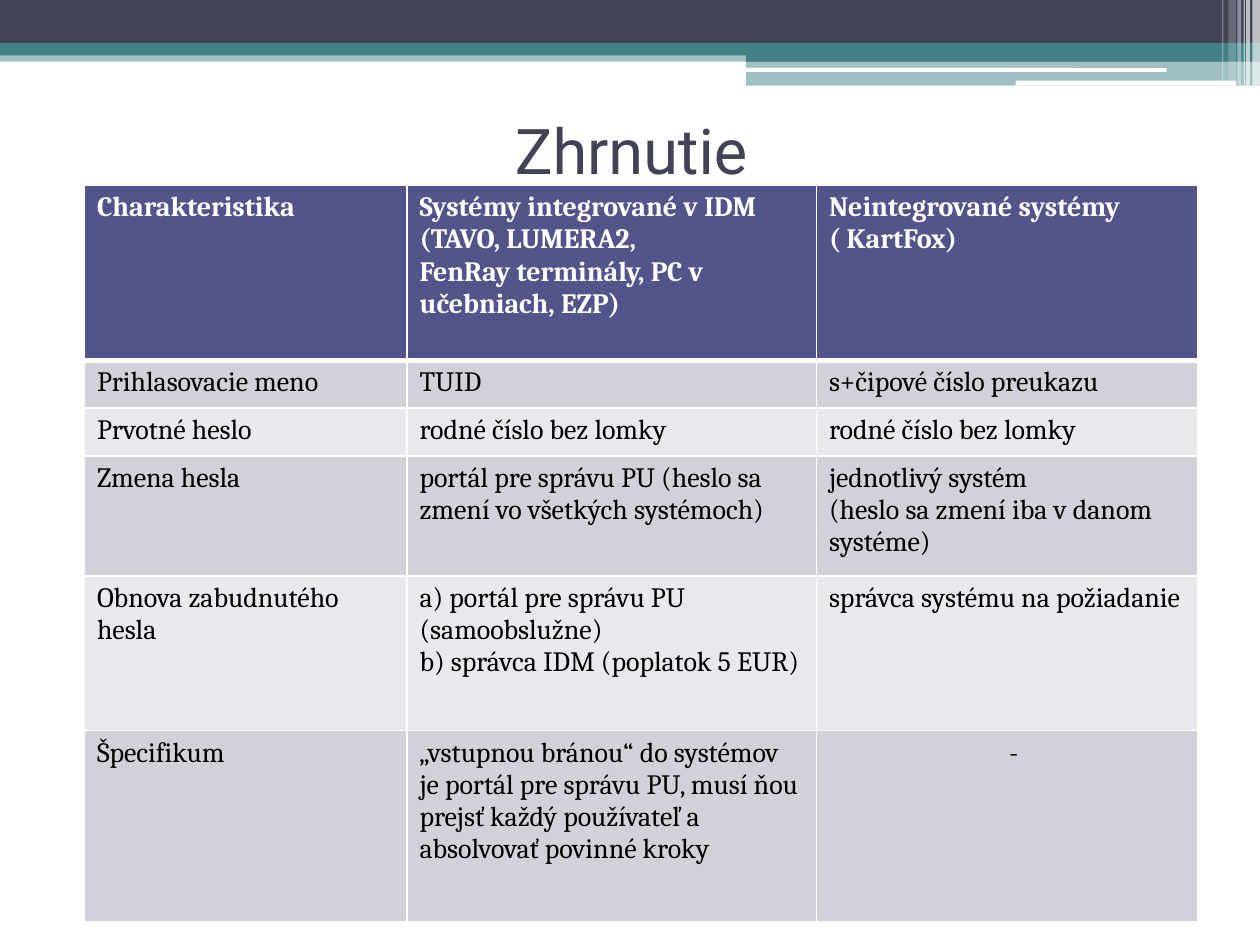
"""Build the summary slide comparing integrated and separate systems."""
import pptx
import pptx.util
import pptx.dml.color
import pptx.enum.shapes
import pptx.enum.text
import pptx.oxml
import pptx.oxml.ns
import lxml.etree

Inches = pptx.util.Inches
Pt = pptx.util.Pt
RGBColor = pptx.dml.color.RGBColor
MSO_SHAPE = pptx.enum.shapes.MSO_SHAPE
PP_ALIGN = pptx.enum.text.PP_ALIGN
MSO_ANCHOR = pptx.enum.text.MSO_ANCHOR

WHITE = RGBColor(0xFF, 0xFF, 0xFF)
BLACK = RGBColor(0x00, 0x00, 0x00)
TEAL = RGBColor(0x43, 0x80, 0x86)
SLATE = RGBColor(0x42, 0x44, 0x56)
HEADER_FILL = RGBColor(0x53, 0x54, 0x8A)
DARK_BAND = RGBColor(0xD1, 0xD1, 0xDA)
LIGHT_BAND = RGBColor(0xE9, 0xE9, 0xED)


def add_run(paragraph, text, font_name, size, color, bold=False):
    run = paragraph.add_run()
    run.text = text
    run.font.name = font_name
    run.font.size = Pt(size)
    run.font.color.rgb = color
    run.font.bold = bold


def add_border(cell, side, width):
    properties = cell._tc.get_or_add_tcPr()
    line = lxml.etree.SubElement(properties, pptx.oxml.ns.qn(f"a:ln{side}"), w=str(Pt(width)))
    fill = lxml.etree.SubElement(line, pptx.oxml.ns.qn("a:solidFill"))
    lxml.etree.SubElement(fill, pptx.oxml.ns.qn("a:srgbClr"), val=str(WHITE))


presentation = pptx.Presentation()
presentation.slide_width = Inches(10)
presentation.slide_height = Inches(7.5)
slide = presentation.slides.add_slide(presentation.slide_layouts[6])

BAR, ROUNDED = MSO_SHAPE.RECTANGLE, MSO_SHAPE.ROUNDED_RECTANGLE
banner = [
    (BAR, 0, 0.4, 10, 0.09, TEAL, 50),
    (BAR, 0, 0, 10, 0.34, SLATE, 100),
    (BAR, 0, 0.34, 10, 0.1, TEAL, 100),
    (BAR, 5.92, 0.39, 4.08, 0.1, TEAL, 100),
    (BAR, 5.92, 0.48, 4.08, 0.2, TEAL, 50),
    (ROUNDED, 5.91, 0.54, 3.35, 0.03, WHITE, 100),
    (ROUNDED, 8.06, 0.64, 1.75, 0.04, WHITE, 100),
    (BAR, 9.94, 0, 0.06, 0.68, WHITE, 65),
    (BAR, 9.89, 0, 0.03, 0.68, WHITE, 65),
    (BAR, 9.87, 0, 0.01, 0.68, WHITE, 60),
    (BAR, 9.82, 0, 0.03, 0.68, WHITE, 40),
    (BAR, 9.75, 0, 0.06, 0.64, WHITE, 20),
    (BAR, 9.7, 0, 0.01, 0.64, WHITE, 30),
]
for kind, left, top, width, height, color, opacity in banner:
    shape = slide.shapes.add_shape(kind, Inches(left), Inches(top), Inches(width), Inches(height))
    shape.shadow.inherit = False
    shape.line.fill.background()
    shape.fill.solid()
    shape.fill.fore_color.rgb = color
    if opacity < 100:
        color_element = shape._element.spPr.find(".//" + pptx.oxml.ns.qn("a:srgbClr"))
        lxml.etree.SubElement(color_element, pptx.oxml.ns.qn("a:alpha"), val=str(opacity * 1000))

title = slide.shapes.add_textbox(Inches(0.51), Inches(0.84), Inches(9), Inches(0.69))
title.text_frame.word_wrap = True
title.text_frame.vertical_anchor = MSO_ANCHOR.MIDDLE
title_paragraph = title.text_frame.paragraphs[0]
title_paragraph.alignment = PP_ALIGN.CENTER
add_run(title_paragraph, "Zhrnutie", "Roboto", 36, SLATE)

column_widths = [2.56, 3.25, 3.03]
row_heights = [1.39, 0.38, 0.38, 0.95, 1.23, 1.52]
rows = [
    [["Charakteristika"],
     ["Systémy integrované v IDM (TAVO, LUMERA2,", "FenRay terminály, PC v učebniach, EZP)"],
     ["Neintegrované systémy ( KartFox)"]],
    [["Prihlasovacie meno"], ["TUID"], ["s+čipové číslo preukazu"]],
    [["Prvotné heslo"], ["rodné číslo bez lomky"], ["rodné číslo bez lomky"]],
    [["Zmena hesla"],
     ["portál pre správu PU (heslo sa zmení vo všetkých systémoch)"],
     ["jednotlivý systém", "(heslo sa zmení iba v danom systéme)"]],
    [["Obnova zabudnutého hesla"],
     ["a) portál pre správu PU", "(samoobslužne)", "b) správca IDM (poplatok 5 EUR)"],
     ["správca systému na požiadanie"]],
    [["Špecifikum"],
     ["„vstupnou bránou“ do systémov je portál pre správu PU, musí ňou prejsť každý "
      "používateľ a absolvovať povinné kroky"],
     ["-"]],
]
table = slide.shapes.add_table(
    len(rows), len(column_widths), Inches(0.67), Inches(1.47),
    Inches(sum(column_widths)), Inches(sum(row_heights))).table
for column, width in zip(table.columns, column_widths):
    column.width = Inches(width)
for row_index, (row, height) in enumerate(zip(rows, row_heights)):
    table.rows[row_index].height = Inches(height)
    is_header = row_index == 0
    row_fill = HEADER_FILL if is_header else DARK_BAND if row_index % 2 else LIGHT_BAND
    for column_index, lines in enumerate(row):
        cell = table.cell(row_index, column_index)
        add_border(cell, "L", 1)
        add_border(cell, "R", 1)
        add_border(cell, "T", 3 if row_index == 1 else 1)
        add_border(cell, "B", 3 if is_header else 1)
        cell.fill.solid()
        cell.fill.fore_color.rgb = row_fill
        for line_index, text in enumerate(lines):
            frame = cell.text_frame
            paragraph = frame.add_paragraph() if line_index else frame.paragraphs[0]
            add_run(paragraph, text, "Cambria", 16, WHITE if is_header else BLACK, is_header)

dash_cell = table.cell(5, 2)
dash_cell.margin_left = Inches(0.2)
dash_cell.text_frame.paragraphs[0].alignment = PP_ALIGN.CENTER

presentation.save("out.pptx")
